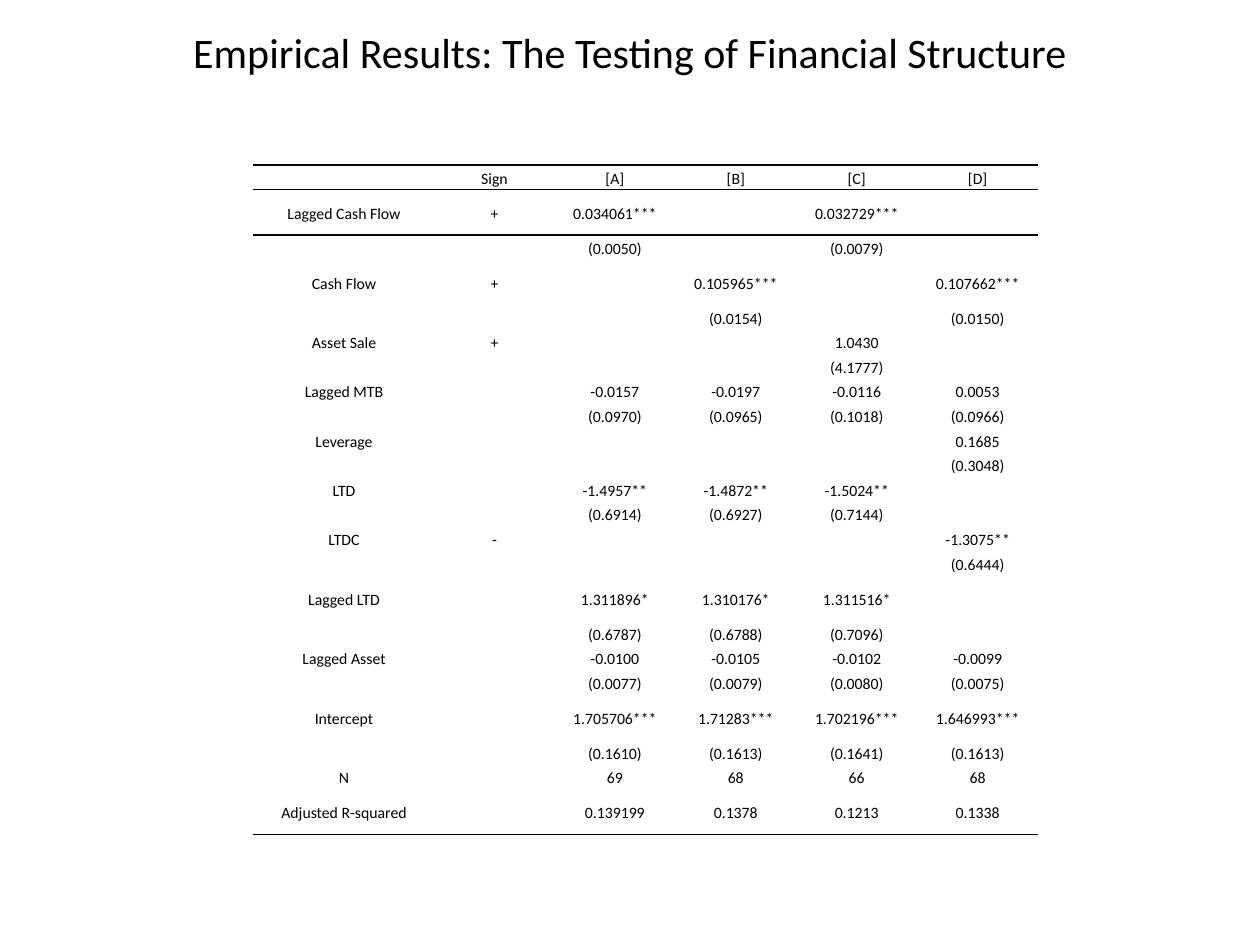
from dataclasses import dataclass

from lxml import etree
from pptx import Presentation, util as u
from pptx.dml.color import RGBColor
from pptx.enum import text
from pptx.oxml.ns import qn


@dataclass
class Theme:
    font: str = "Calibri"
    ink: str = "000000"
    head: int = 24
    body: int = 9
    rule: int = 1


theme = Theme()


def write(para, words, size):
    para.alignment = text.PP_ALIGN.CENTER
    run = para.add_run()
    run.text = words
    run.font.name = theme.font
    run.font.size = u.Pt(size)
    run.font.color.rgb = RGBColor.from_string(theme.ink)


def rule(cell, side):
    props = cell._tc.get_or_add_tcPr()
    line = etree.SubElement(props, qn("a:ln" + side), w=str(u.Pt(theme.rule)))
    fill = etree.SubElement(line, qn("a:solidFill"))
    etree.SubElement(fill, qn("a:srgbClr"), val=theme.ink)


deck = Presentation()
deck.slide_width, deck.slide_height = u.Inches(10), u.Inches(7.5)
slide = deck.slides.add_slide(deck.slide_layouts[5])

# Title
title = slide.shapes.title
title.left, title.top = u.Inches(0.5), u.Inches(0.3)
title.width, title.height = u.Inches(9), u.Inches(0.22)
frame = title.text_frame
frame.word_wrap = True
frame.auto_size = text.MSO_AUTO_SIZE.NONE
frame.vertical_anchor = text.MSO_ANCHOR.MIDDLE
write(frame.paragraphs[0], "Empirical Results: The Testing of Financial Structure",
      theme.head)

# Regression results: label, expected sign, models A to D
rows = [
    ["", "Sign", "[A]", "[B]", "[C]", "[D]"],
    ["Lagged Cash Flow", "+", "0.034061***", "", "0.032729***", ""],
    ["", "", "(0.0050)", "", "(0.0079)", ""],
    ["Cash Flow", "+", "", "0.105965***", "", "0.107662***"],
    ["", "", "", "(0.0154)", "", "(0.0150)"],
    ["Asset Sale", "+", "", "", "1.0430", ""],
    ["", "", "", "", "(4.1777)", ""],
    ["Lagged MTB", "", "-0.0157", "-0.0197", "-0.0116", "0.0053"],
    ["", "", "(0.0970)", "(0.0965)", "(0.1018)", "(0.0966)"],
    ["Leverage", "", "", "", "", "0.1685"],
    ["", "", "", "", "", "(0.3048)"],
    ["LTD", "", "-1.4957**", "-1.4872**", "-1.5024**", ""],
    ["", "", "(0.6914)", "(0.6927)", "(0.7144)", ""],
    ["LTDC", "-", "", "", "", "-1.3075**"],
    ["", "", "", "", "", "(0.6444)"],
    ["Lagged LTD", "", "1.311896*", "1.310176*", "1.311516*", ""],
    ["", "", "(0.6787)", "(0.6788)", "(0.7096)", ""],
    ["Lagged Asset", "", "-0.0100", "-0.0105", "-0.0102", "-0.0099"],
    ["", "", "(0.0077)", "(0.0079)", "(0.0080)", "(0.0075)"],
    ["Intercept", "", "1.705706***", "1.71283***", "1.702196***", "1.646993***"],
    ["", "", "(0.1610)", "(0.1613)", "(0.1641)", "(0.1613)"],
    ["N", "", "69", "68", "66", "68"],
    ["Adjusted R-squared", "", "0.139199", "0.1378", "0.1213", "0.1338"],
]
last = len(rows) - 1

# Table without style; the low rows share what the tall rows leave
high = u.Inches(5.32)
tall = u.Inches(0.36)
lofty = {1, 3, 15, 19, 22}
low = (high - tall * len(lofty)) // (len(rows) - len(lofty))
table = slide.shapes.add_table(len(rows), len(rows[0]), u.Inches(2.01),
                               u.Inches(1.31), u.Inches(6.23), high).table
table.first_row = table.horz_banding = False
style = table._tbl.tblPr.find(qn("a:tableStyleId"))
style.text = "{2D5ABB26-0587-4C30-8999-92F81FD0307C}"
for col, width in zip(table.columns, [1.44, 0.95] + [0.96] * 4):
    col.width = u.Inches(width)

# Cells, with rules above and below the header and under the last row
sides = {0: "TB", 1: "T", last: "B"}
for r, row in enumerate(rows):
    table.rows[r].height = tall if r in lofty else low
    for c, words in enumerate(row):
        cell = table.cell(r, c)
        cell.margin_left = cell.margin_right = u.Inches(0.07)
        cell.margin_top = cell.margin_bottom = 0
        cell.vertical_anchor = text.MSO_ANCHOR.MIDDLE
        for side in sides.get(r, ""):
            rule(cell, side)
        cell.fill.background()
        para = cell.text_frame.paragraphs[0]
        para.line_spacing = 1.15
        para.font.size = u.Pt(theme.body)
        if words:
            write(para, words, theme.body)
        else:
            etree.SubElement(para._p, qn("a:endParaRPr"), sz=str(theme.body * 100))

deck.save("out.pptx")
